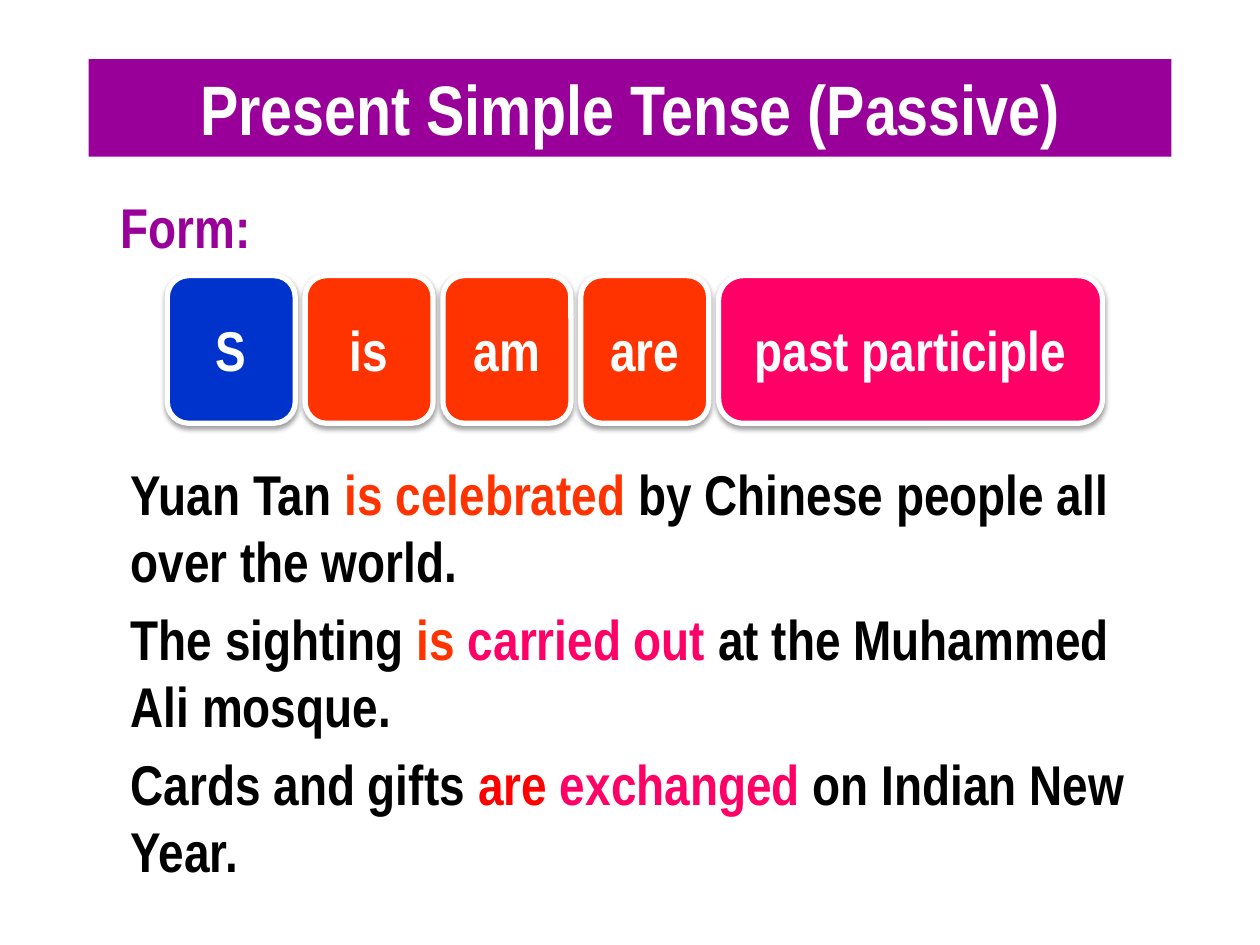
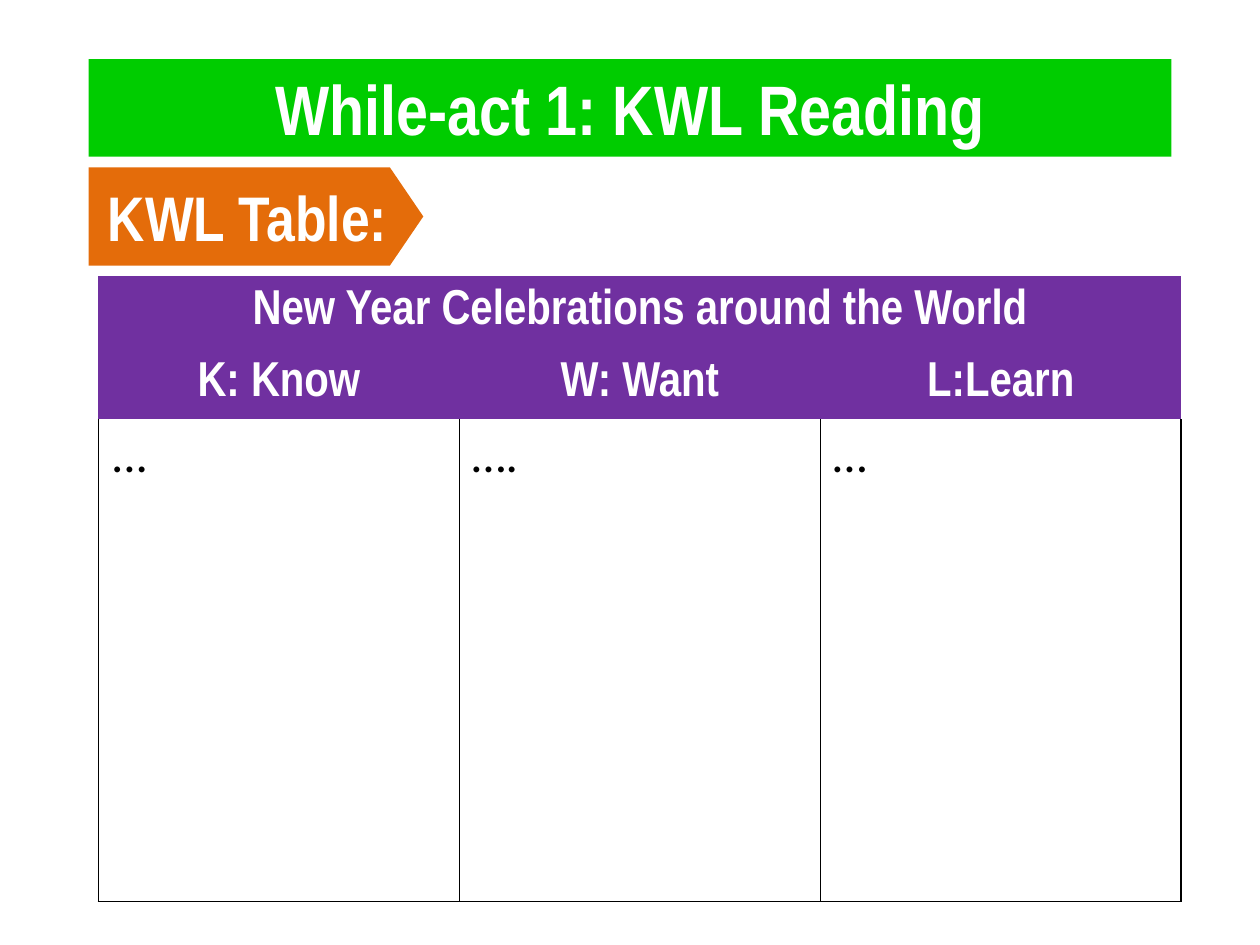
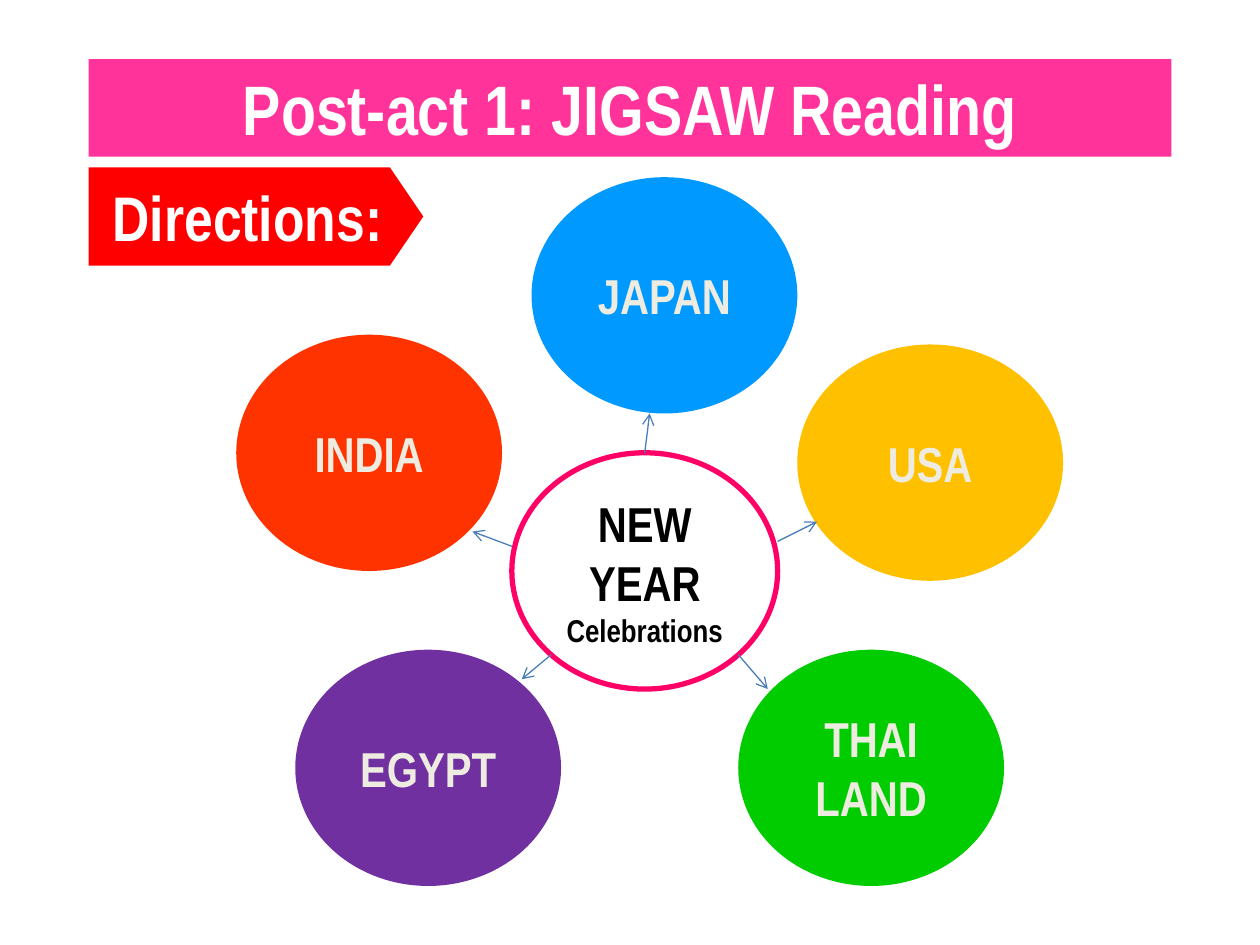
"""Build three slides for a reading lesson on New Year celebrations."""
from typing import NamedTuple

from lxml.etree import SubElement
from pptx import Presentation
from pptx.dml.color import RGBColor
from pptx.enum.shapes import MSO_CONNECTOR, MSO_SHAPE
from pptx.enum.text import MSO_ANCHOR, MSO_AUTO_SIZE, PP_ALIGN
from pptx.oxml.ns import qn
from pptx.util import Inches, Pt

WIDTH, HEIGHT = Inches(10), Inches(7.5)
COLS, ROWS = 128, 96
C = {
    "white": "FFFFFF", "black": "000000", "cream": "EEECE1", "plum": "990099",
    "navy": "0033CC", "flame": "FF3300", "rose": "FF0066", "red": "FF0000",
    "green": "00CC00", "orange": "E46C0A", "violet": "7030A0", "pink": "FF3399",
    "gold": "FFC000", "sky": "0099FF", "steel": "4B7EBC",
}
FONT = {"name": "Arial Narrow", "bold": True}
NO_GRID_STYLE = "{2D5ABB26-0587-4C30-8999-92F81FD0307C}"


class Box(NamedTuple):
    """A place on the slide grid, in columns and rows."""
    col: float
    row: float
    cols: float
    rows: float


class Run(NamedTuple):
    """A stretch of text with one size and colour."""
    text: str
    size: int
    color: str = "white"
    fmt: dict = FONT


class Item(NamedTuple):
    """A filled shape with lines of text."""
    text: str
    color: str
    col: float
    row: float


class Arrow(NamedTuple):
    """An arrow between two grid points."""
    col1: float
    row1: float
    col2: float
    row2: float


BAND = Box(9, 6, 110, 9.9)
PLATE = Box(9, 17, 34, 10)
BODY = Box(12, 46, 106, 44)
TILE_COLS, TILE_PITCH, TILE_ROWS = 13, 14, 15
BALL_COLS, BALL_ROWS = 27, 24

TILES = [("S", "navy", 1), ("is", "flame", 1), ("am", "flame", 1),
         ("are", "flame", 1), ("past participle", "rose", 3)]
SENTENCES = [
    [("Yuan Tan ", "black"), ("is celebrated ", "flame"),
     ("by Chinese people all over the world.", "black")],
    [("The sighting ", "black"), ("is ", "flame"), ("carried out ", "rose"),
     ("at the Muhammed Ali mosque.", "black")],
    [("Cards and gifts ", "black"), ("are ", "red"), ("exchanged ", "rose"),
     ("on Indian New Year.", "black")],
]
KWL_HEAD = "New Year Celebrations around the World"
KWL = [("K: Know", "..."), ("W: Want", "…."), ("L:Learn", "…")]
COUNTRIES = [
    Item("USA", "gold", 81, 35), Item("INDIA", "flame", 24, 34),
    Item("THAI\nLAND", "green", 75, 66), Item("EGYPT", "violet", 30, 66),
    Item("JAPAN", "sky", 54, 18),
]
ARROWS = [
    Arrow(52, 55.5, 48, 54), Arrow(79, 55, 83, 53), Arrow(56, 66.5, 53, 69),
    Arrow(75, 66.5, 78, 70), Arrow(65.5, 46, 66, 42),
]


def x(cols: float) -> int:
    """Turn grid columns into a length."""
    return int(WIDTH * cols / COLS)


def y(rows: float) -> int:
    """Turn grid rows into a length."""
    return int(HEIGHT * rows / ROWS)


def place(box: Box) -> tuple[int, int, int, int]:
    """Turn a grid box into left, top, width and height."""
    return x(box.col), y(box.row), x(box.cols), y(box.rows)


def rgb(name: str) -> RGBColor:
    """Look up a named colour."""
    return RGBColor.from_string(C[name])


def put(obj, values: dict) -> None:
    """Set attributes from a dict of values."""
    for key, value in values.items():
        setattr(obj, key, value)


def move(sp, box: Box) -> None:
    """Move a placeholder to a grid box."""
    put(sp, dict(zip(("left", "top", "width", "height"), place(box))))


def write(p, runs: list[Run], align=PP_ALIGN.CENTER) -> None:
    """Fill a paragraph with formatted runs."""
    p.alignment = align
    for run in runs:
        r = p.add_run()
        r.text = run.text
        put(r.font, {**run.fmt, "size": Pt(run.size)})
        r.font.color.rgb = rgb(run.color)


def frame(sp, lines: list[list[Run]], align=PP_ALIGN.CENTER) -> None:
    """Write lines of runs, centred vertically in a shape."""
    tf = sp.text_frame
    put(tf, {"word_wrap": True, "vertical_anchor": MSO_ANCHOR.MIDDLE})
    for i, runs in enumerate(lines):
        write(tf.paragraphs[0] if i == 0 else tf.add_paragraph(), runs, align)


def shape(s, kind, box: Box, lines: list[list[Run]],
          fill: str | None = None, line: str | None = None):
    """Draw a preset shape with text."""
    sp = s.shapes.add_shape(kind, *place(box))
    sp.shadow.inherit = False
    if fill:
        sp.fill.solid()
        sp.fill.fore_color.rgb = rgb(fill)
    else:
        sp.fill.background()
    if line:
        sp.line.color.rgb = rgb(line)
        sp.line.width = Pt(3)
    else:
        sp.line.fill.background()
    frame(sp, lines)
    return sp


def drop_shadow(sp) -> None:
    """Give a shape a soft shadow straight below it."""
    effects = sp._element.spPr.find(qn("a:effectLst"))
    shadow = SubElement(effects, qn("a:outerShdw"), blurRad=str(Pt(3.1)),
                        dist=str(Pt(1.6)), dir="5400000", rotWithShape="0")
    color = SubElement(shadow, qn("a:srgbClr"), val=C["black"])
    SubElement(color, qn("a:alpha"), val="38000")


def arrow(s, a: Arrow) -> None:
    """Draw a thin line with an open arrowhead at its end."""
    cx = s.shapes.add_connector(MSO_CONNECTOR.STRAIGHT, x(a.col1), y(a.row1),
                                x(a.col2), y(a.row2))
    cx.line.color.rgb = rgb("steel")
    cx.line.width = Pt(0.75)
    SubElement(cx.line._get_or_add_ln(), qn("a:tailEnd"), type="arrow")
    SubElement(cx._element.spPr, qn("a:effectLst"))


def new_slide(prs, layout: int, title: str, color: str):
    """Add a slide with a coloured title band."""
    s = prs.slides.add_slide(prs.slide_layouts[layout])
    sp = s.shapes.title
    move(sp, BAND)
    sp.fill.solid()
    sp.fill.fore_color.rgb = rgb(color)
    sp.text_frame.auto_size = MSO_AUTO_SIZE.NONE
    frame(sp, [[Run(title, 40)]])
    return s


def plate(s, text: str, color: str) -> None:
    """Draw the pointed label below the title band."""
    sp = shape(s, MSO_SHAPE.PENTAGON, PLATE, [[Run(text, 36)]], color)
    sp.adjustments[0] = 0.34


def fill_cell(cell, run: Run, align, fill: str | None = None) -> None:
    """Write a table cell, either filled or with ruled sides."""
    write(cell.text_frame.paragraphs[0], [run], align)
    if fill:
        cell.vertical_anchor = MSO_ANCHOR.MIDDLE
        cell.fill.solid()
        cell.fill.fore_color.rgb = rgb(fill)
        return
    tc_pr = cell._tc.get_or_add_tcPr()
    for side in ("a:lnL", "a:lnR", "a:lnB"):
        ln = SubElement(tc_pr, qn(side), w=str(Pt(1)))
        SubElement(SubElement(ln, qn("a:solidFill")), qn("a:srgbClr"), val=C["black"])
    cell.fill.background()


def passive_slide(prs) -> None:
    """Show the form of the passive and three examples."""
    s = new_slide(prs, 1, "Present Simple Tense (Passive)", "plum")
    form = s.shapes.add_textbox(*place(Box(11, 18, 20, 10)))
    frame(form, [[Run("Form:", 32, "plum")]], PP_ALIGN.LEFT)
    for i, (text, color, span) in enumerate(TILES):
        box = Box(17 + i * TILE_PITCH, 28, TILE_COLS * span, TILE_ROWS)
        drop_shadow(shape(s, MSO_SHAPE.ROUNDED_RECTANGLE, box,
                          [[Run(text, 32)]], color, "white"))
    body = s.placeholders[1]
    move(body, BODY)
    body.text_frame.auto_size = MSO_AUTO_SIZE.NONE
    frame(body, [[Run(text, 32, color) for text, color in parts]
                 for parts in SENTENCES], PP_ALIGN.LEFT)
    body.text_frame.vertical_anchor = MSO_ANCHOR.TOP
    for i, p in enumerate(body.text_frame.paragraphs):
        p_pr = p._p.get_or_add_pPr()
        p_pr.set("marL", "0")
        p_pr.set("indent", "0")
        SubElement(p_pr, qn("a:buNone"))
        p.space_before = Pt(6 if i else 0)


def kwl_slide(prs) -> None:
    """Show the empty KWL table."""
    s = new_slide(prs, 5, "While-act 1: KWL Reading", "green")
    plate(s, "KWL Table:", "orange")
    heights = (7.3, 7.3, 49)
    box = Box(10, 28, 110, sum(heights))
    tbl = s.shapes.add_table(len(heights), len(KWL), *place(box)).table
    put(tbl, {"first_row": False, "horz_banding": False})
    tbl._tbl.tblPr[0].text = NO_GRID_STYLE
    for row, height in zip(tbl.rows, heights):
        row.height = y(height)
    tbl.cell(0, 0).merge(tbl.cell(0, len(KWL) - 1))
    fill_cell(tbl.cell(0, 0), Run(KWL_HEAD, 28), PP_ALIGN.CENTER, "violet")
    plain = {"name": "Calibri", "bold": False}
    for i, (head, note) in enumerate(KWL):
        fill_cell(tbl.cell(1, i), Run(head, 28), PP_ALIGN.CENTER, "violet")
        fill_cell(tbl.cell(2, i), Run(note, 28, "black", plain), PP_ALIGN.LEFT)


def jigsaw_slide(prs) -> None:
    """Show the countries around the New Year topic."""
    s = new_slide(prs, 5, "Post-act 1: JIGSAW Reading", "pink")
    plate(s, "Directions:", "red")
    topic = [Run("NEW YEAR", 28, "black"), Run(" ", 20, "black"),
             Run("Celebrations", 18, "black")]
    shape(s, MSO_SHAPE.OVAL, Box(52, 46, BALL_COLS, BALL_ROWS), [topic], line="rose")
    for item in COUNTRIES:
        lines = [[Run(text, 28, "cream")] for text in item.text.split("\n")]
        shape(s, MSO_SHAPE.OVAL, Box(item.col, item.row, BALL_COLS, BALL_ROWS),
              lines, item.color)
    for a in ARROWS:
        arrow(s, a)


def main() -> None:
    """Build and save the presentation."""
    prs = Presentation()
    put(prs, {"slide_width": WIDTH, "slide_height": HEIGHT})
    for build in (passive_slide, kwl_slide, jigsaw_slide):
        build(prs)
    prs.save("out.pptx")


if __name__ == "__main__":
    main()
